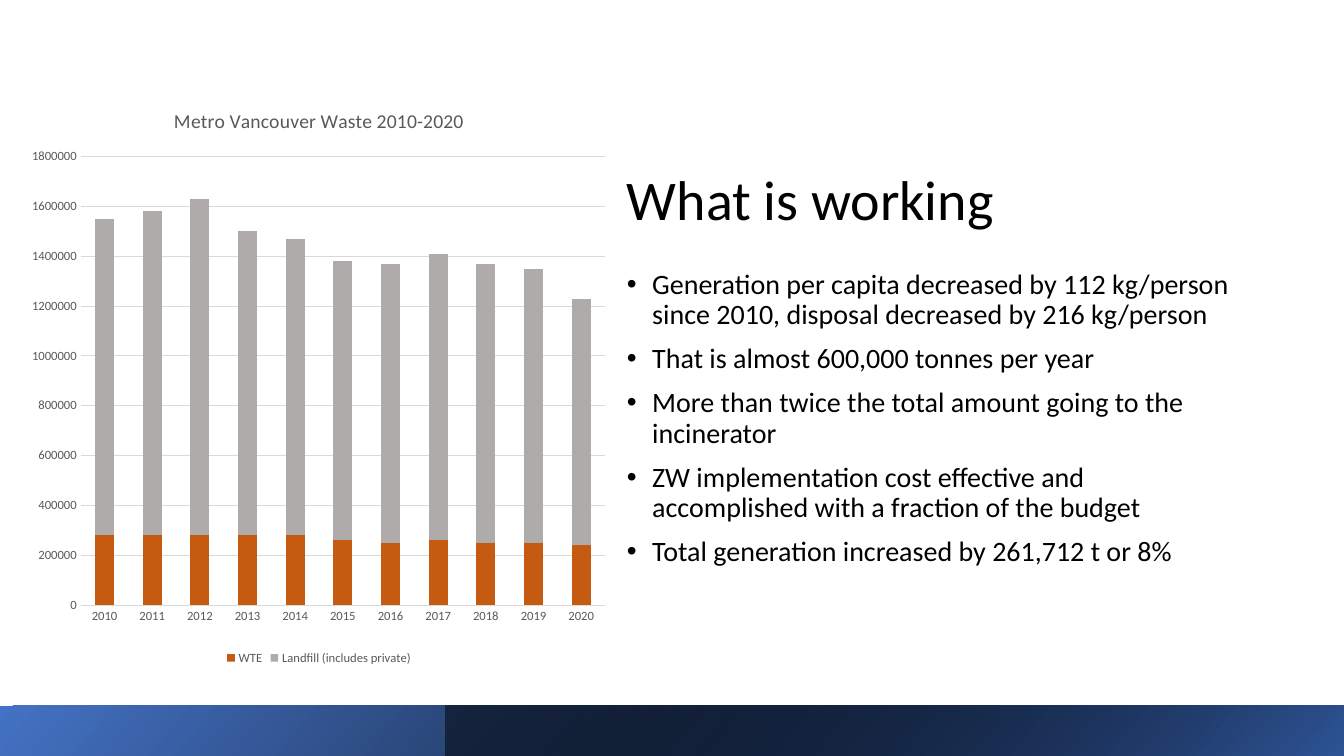
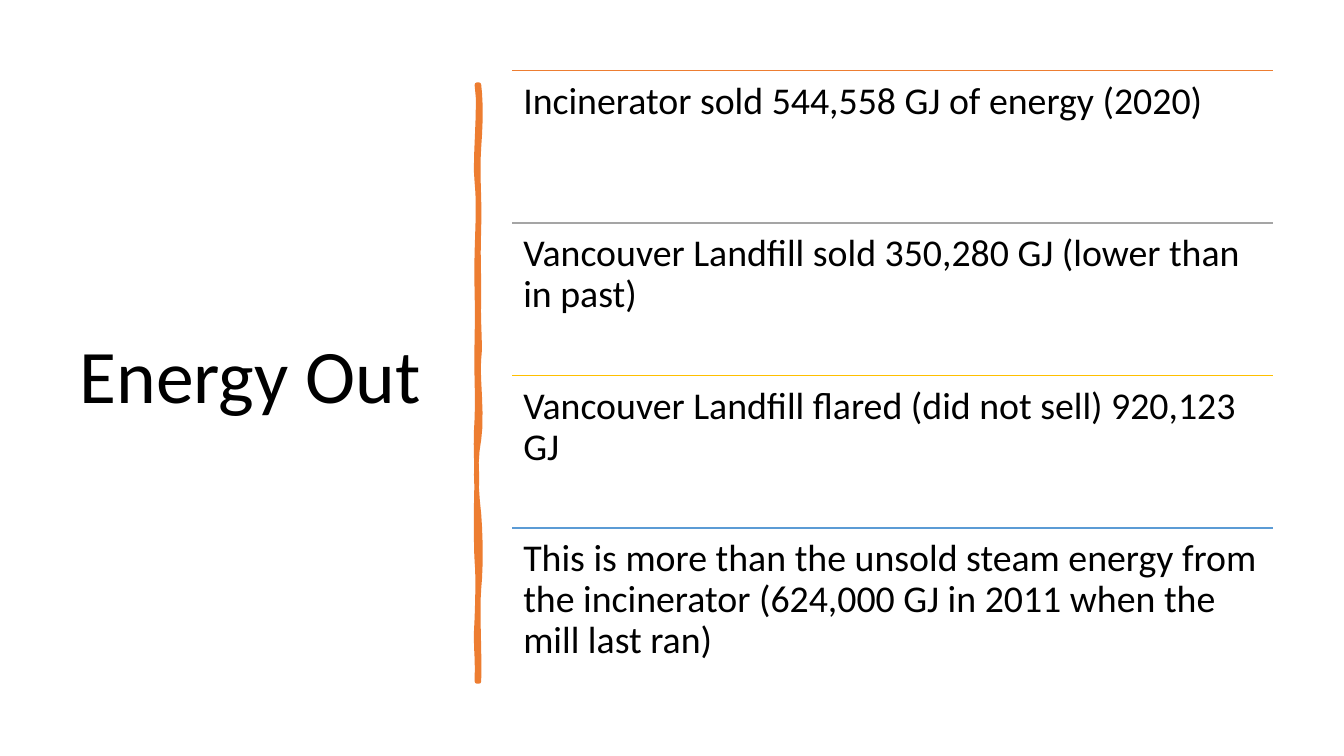
from lxml.etree import SubElement
from pptx import Presentation
from pptx.chart.data import CategoryChartData
from pptx.dml.color import RGBColor
from pptx.enum.chart import XL_CHART_TYPE as ChartType
from pptx.enum.chart import XL_LEGEND_POSITION as LegendPosition
from pptx.enum.chart import XL_TICK_MARK as TickMark
from pptx.enum.shapes import MSO_CONNECTOR as Connector
from pptx.enum.shapes import MSO_SHAPE as Shape
from pptx.enum.text import MSO_ANCHOR as Anchor
from pptx.oxml.ns import qn
from pptx.util import Inches, Pt

FONT = "Calibri"
BLACK = "000000"
GREY_TEXT = "595959"
GRID = "D9D9D9"
ORANGE = "ED7D31"
SLIDE_WIDTH, SLIDE_HEIGHT = 13.33, 7.5
BAND_TOP, BAND_HEIGHT = 7, 0.5

FINDINGS = [
    "Generation per capita decreased by 112 kg/person since 2010, disposal decreased by 216 kg/person",
    "That is almost 600,000 tonnes per year",
    "More than twice the total amount going to the incinerator",
    "ZW implementation cost effective and accomplished with a fraction of the budget",
    "Total generation increased by 261,712 t or 8%",
]

YEARS = [str(year) for year in range(2010, 2021)]
WASTE = [
    ("WTE", "C55A11", [280000, 280000, 280000, 280000, 280000, 260000,
                       250000, 260000, 250000, 250000, 240000]),
    ("Landfill (includes private)", "AFABAB",
     [1270000, 1300000, 1350000, 1220000, 1190000, 1120000,
      1120000, 1150000, 1120000, 1100000, 990000]),
]

ENERGY_FACTS = [
    (ORANGE, "Incinerator sold 544,558 GJ of energy (2020)"),
    ("A5A5A5", "Vancouver Landfill sold 350,280 GJ (lower than in past)"),
    ("FFC000", "Vancouver Landfill flared (did not sell) 920,123 GJ"),
    ("5B9BD5", "This is more than the unsold steam energy from the incinerator "
               "(624,000 GJ in 2011 when the mill last ran)"),
]

STROKE_START = (4.75, 0.84)
STROKE_CURVES = [
    ((4.77, 1.02), (4.77, 1.19), (4.75, 1.46)),
    ((4.73, 1.73), (4.76, 1.95), (4.75, 2.26)),
    ((4.74, 2.57), (4.75, 2.62), (4.75, 2.94)),
    ((4.74, 3.25), (4.77, 3.42), (4.75, 3.56)),
    ((4.73, 3.7), (4.79, 4.14), (4.75, 4.36)),
    ((4.71, 4.57), (4.72, 4.84), (4.75, 5.1)),
    ((4.77, 5.36), (4.77, 5.64), (4.75, 5.84)),
    ((4.73, 6.03), (4.76, 6.5), (4.75, 6.76)),
    ((4.74, 6.76), (4.73, 6.76), (4.73, 6.76)),
    ((4.74, 6.46), (4.71, 6.44), (4.73, 6.13)),
    ((4.74, 5.83), (4.74, 5.7), (4.73, 5.57)),
    ((4.72, 5.44), (4.72, 4.95), (4.73, 4.77)),
    ((4.73, 4.59), (4.71, 4.45), (4.73, 4.15)),
    ((4.74, 3.86), (4.72, 3.73), (4.73, 3.35)),
    ((4.74, 2.98), (4.72, 2.81), (4.73, 2.5)),
    ((4.74, 2.18), (4.75, 2), (4.73, 1.81)),
    ((4.7, 1.63), (4.77, 1.04), (4.73, 0.84)),
]


def color(value):
    return RGBColor.from_string(value)


def style_font(font, size, value):
    font.name = FONT
    font.size = Pt(size)
    font.bold = False
    font.color.rgb = color(value)


def add_bullet(paragraph):
    properties = paragraph._p.get_or_add_pPr()
    properties.set("marL", str(Inches(0.25)))
    properties.set("indent", str(Inches(-0.25)))
    SubElement(properties, qn("a:buFont")).set("typeface", "Arial")
    SubElement(properties, qn("a:buChar")).set("char", "•")


def add_text(slide, box, texts, size, anchor=Anchor.TOP, inset=None, bullets=False):
    frame = slide.shapes.add_textbox(*map(Inches, box)).text_frame
    frame.word_wrap = True
    frame.vertical_anchor = anchor
    if inset is not None:
        frame.margin_left = frame.margin_right = Inches(inset)
        frame.margin_top = frame.margin_bottom = Inches(inset)
    for index, text in enumerate(texts):
        paragraph = frame.add_paragraph() if index else frame.paragraphs[0]
        paragraph.line_spacing = 0.9
        if bullets:
            paragraph.space_before = Pt(10)
            add_bullet(paragraph)
        run = paragraph.add_run()
        run.text = text
        style_font(run.font, size, BLACK)


def add_band(slide, left, stops, start_opacity=100):
    band = slide.shapes.add_shape(
        Shape.RECTANGLE, Inches(left), Inches(BAND_TOP),
        Inches(SLIDE_WIDTH - left), Inches(BAND_HEIGHT))
    band.shadow.inherit = False
    band.line.fill.background()
    band.fill.gradient()
    band.fill.gradient_angle = 320
    for stop, (position, value) in zip(band.fill.gradient_stops, stops):
        stop.position = position
        stop.color.rgb = color(value)
    if start_opacity < 100:
        start = next(band._element.iter(qn("a:srgbClr")))
        SubElement(start, qn("a:alpha")).set("val", str(start_opacity * 1000))


def add_rule(slide, left, top, width, value):
    rule = slide.shapes.add_connector(
        Connector.STRAIGHT, Inches(left), Inches(top), Inches(left + width), Inches(top))
    rule.line.color.rgb = color(value)
    rule.line.width = Pt(1)
    SubElement(rule._element.spPr, qn("a:effectLst"))


def flatten(start, curves, steps=6):
    points = []
    for first, second, end in curves:
        for step in range(1, steps + 1):
            t = step / steps
            weights = ((1 - t) ** 3, 3 * t * (1 - t) ** 2, 3 * t ** 2 * (1 - t), t ** 3)
            corners = (start, first, second, end)
            points.append(tuple(
                Inches(sum(w * corner[axis] for w, corner in zip(weights, corners)))
                for axis in (0, 1)))
        start = end
    return points


def add_brush_stroke(slide):
    builder = slide.shapes.build_freeform(*map(Inches, STROKE_START), scale=1.0)
    builder.add_line_segments(flatten(STROKE_START, STROKE_CURVES), close=True)
    stroke = builder.convert_to_shape()
    stroke.shadow.inherit = False
    stroke.fill.solid()
    stroke.fill.fore_color.rgb = color(ORANGE)
    stroke.line.color.rgb = color(ORANGE)
    stroke.line.width = Pt(3.25)


def place_plot(chart, **fractions):
    plot_area = chart._chartSpace.chart.plotArea
    layout = plot_area.find(qn("c:layout"))
    if layout is None:
        layout = SubElement(plot_area, qn("c:layout"))
        plot_area.insert(0, layout)
    manual = SubElement(layout, qn("c:manualLayout"))
    settings = {"layoutTarget": "inner", "xMode": "edge", "yMode": "edge", **fractions}
    for name, value in settings.items():
        SubElement(manual, qn(f"c:{name}")).set("val", str(value))


def style_axes(chart):
    for axis in (chart.category_axis, chart.value_axis):
        axis.major_tick_mark = axis.minor_tick_mark = TickMark.NONE
        style_font(axis.tick_labels.font, 9, GREY_TEXT)
    amounts = chart.value_axis
    amounts.minimum_scale, amounts.maximum_scale = 0, 1800000
    amounts.major_unit = 200000
    amounts.format.line.fill.background()
    for line in (chart.category_axis.format.line, amounts.major_gridlines.format.line):
        line.color.rgb = color(GRID)
        line.width = Pt(0.75)


def add_waste_chart(slide, box):
    data = CategoryChartData()
    data.categories = YEARS
    for name, _, tonnes in WASTE:
        data.add_series(name, tonnes)
    chart = slide.shapes.add_chart(
        ChartType.COLUMN_STACKED, *map(Inches, box), data).chart
    style_font(chart.font, 10, BLACK)
    chart.has_title = True
    heading = chart.chart_title.text_frame.paragraphs[0].add_run()
    heading.text = "Metro Vancouver Waste 2010-2020"
    style_font(heading.font, 14, GREY_TEXT)
    chart.chart_title.include_in_layout = False
    chart.has_legend = True
    chart.legend.position = LegendPosition.BOTTOM
    chart.legend.include_in_layout = False
    style_font(chart.legend.font, 9, GREY_TEXT)
    style_axes(chart)
    columns = chart.plots[0]
    columns.vary_by_categories = False
    columns.gap_width = 150
    columns.overlap = 100
    for series, (_, value, _) in zip(columns.series, WASTE):
        series.format.fill.solid()
        series.format.fill.fore_color.rgb = color(value)
    place_plot(chart, x=0.1, y=0.12, w=0.88, h=0.77)


def add_energy_facts(slide, left, top, width, height):
    row_height = height / len(ENERGY_FACTS)
    for index, (value, fact) in enumerate(ENERGY_FACTS):
        row_top = top + index * row_height
        add_rule(slide, left, row_top, width, value)
        add_text(slide, (left, row_top, width, row_height), [fact], 27, inset=0.11)


def build_results(slide):
    add_text(slide, (6.12, 0.54, 6.29, 1.82), ["What is working"], 40, Anchor.BOTTOM)
    add_text(slide, (6.12, 2.63, 6.29, 3.5), FINDINGS, 20, bullets=True)
    add_band(slide, 0, [(0, "4472C4"), (0.9, BLACK)])
    add_band(slide, 4.42, [(0, BLACK), (1, "2F5597")], start_opacity=50)
    add_waste_chart(slide, (0.21, 0.86, 5.91, 5.78))


def build_energy(slide):
    add_text(slide, (0.69, 0.7, 3.74, 6.11), ["Energy Out"], 54, Anchor.MIDDLE)
    add_brush_stroke(slide)
    add_energy_facts(slide, 5.08, 0.7, 7.55, 6.05)


def main():
    deck = Presentation()
    deck.slide_width = Inches(SLIDE_WIDTH)
    deck.slide_height = Inches(SLIDE_HEIGHT)
    for build in (build_results, build_energy):
        build(deck.slides.add_slide(deck.slide_layouts[6]))
    deck.save("out.pptx")


if __name__ == "__main__":
    main()
